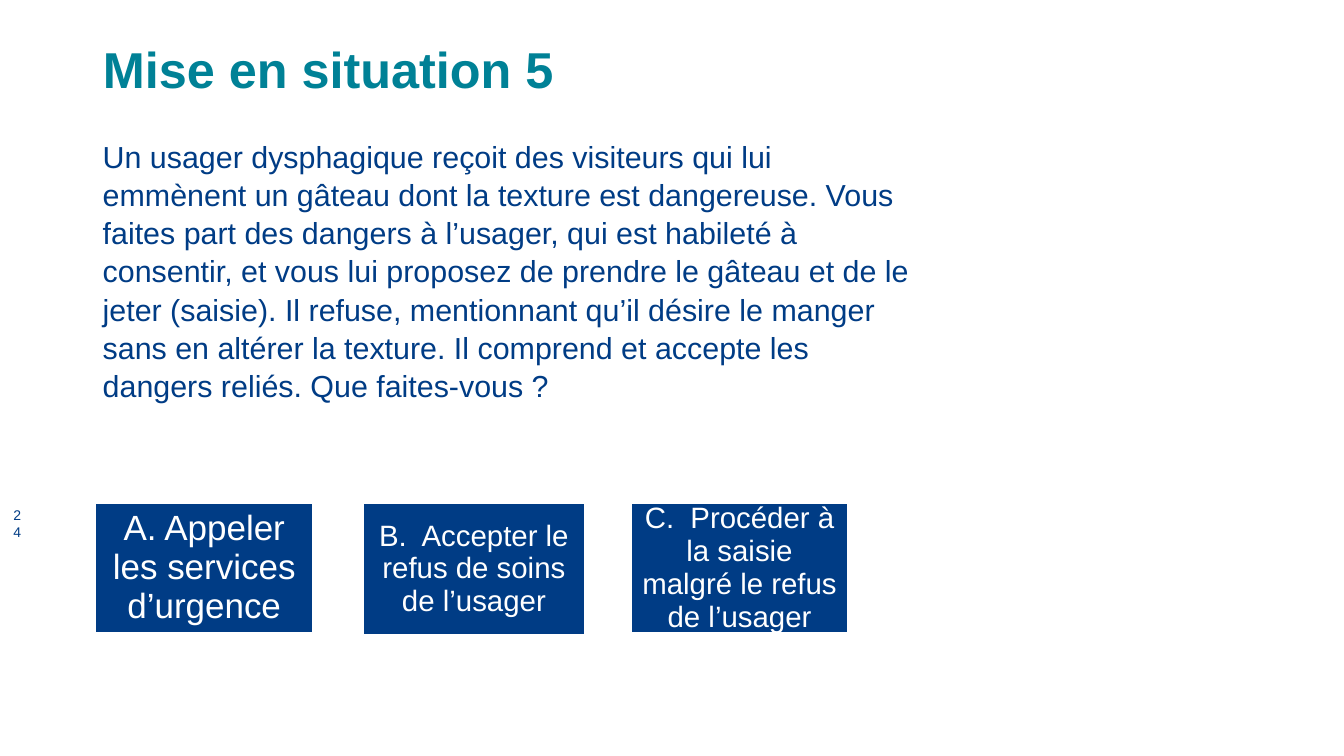
from pptx import Presentation
from pptx.dml.color import RGBColor
from pptx.enum.shapes import MSO_SHAPE
from pptx.enum.text import MSO_ANCHOR, MSO_AUTO_SIZE, PP_ALIGN
from pptx.util import Inches, Pt

TEAL = RGBColor(0x00, 0x81, 0x96)
NAVY = RGBColor(0x00, 0x3C, 0x85)
WHITE = RGBColor(0xFF, 0xFF, 0xFF)
FONT = "Arial"
TITLE_ONLY = 5

# Grid in inches
TEXT_LEFT, TEXT_WIDTH = 0.92, 8.31
CARD_LEFT, CARD_PITCH, CARD_ROW = 0.95, 2.655, 4.99

SITUATION = (
    "Un usager dysphagique reçoit des visiteurs qui lui emmènent un gâteau "
    "dont la texture est dangereuse. Vous faites part des dangers à l’usager, "
    "qui est habileté à consentir, et vous lui proposez de prendre le gâteau "
    "et de le jeter (saisie). Il refuse, mentionnant qu’il désire le manger "
    "sans en altérer la texture. Il comprend et accepte les dangers reliés. "
    "Que faites-vous ?"
)

# Text, font size, inset, width, height
CHOICES = [
    ("A. Appeler les services d’urgence", 25, 0.1, 2.15, 1.29),
    ("B.  Accepter le refus de soins de l’usager", 21, 0.09, 2.19, 1.31),
    ("C.  Procéder à la saisie malgré le refus de l’usager", 21, 0.09, 2.15, 1.29),
]


def write(shape, text, size, color, align=PP_ALIGN.LEFT, anchor=MSO_ANCHOR.TOP,
          spacing=1.0, bold=False):
    """Put one formatted paragraph in a shape."""
    frame = shape.text_frame
    frame.text = text
    frame.word_wrap = True
    frame.auto_size = MSO_AUTO_SIZE.NONE
    frame.vertical_anchor = anchor
    paragraph = frame.paragraphs[0]
    paragraph.alignment = align
    paragraph.line_spacing = spacing
    font = paragraph.runs[0].font
    font.name, font.size, font.bold = FONT, Pt(size), bold
    font.color.rgb = color


def add_title(slide, text):
    title = slide.shapes.title
    title.left, title.top = Inches(TEXT_LEFT), Inches(0.4)
    title.width, title.height = Inches(TEXT_WIDTH), Inches(1.45)
    write(title, text, 36, TEAL, spacing=0.9, bold=True)


def add_text(slide, text, left, top, width, height, size, **style):
    box = slide.shapes.add_textbox(
        Inches(left), Inches(top), Inches(width), Inches(height))
    write(box, text, size, NAVY, **style)


def add_choice(slide, column, text, size, inset, width, height):
    card = slide.shapes.add_shape(
        MSO_SHAPE.RECTANGLE, Inches(CARD_LEFT + column * CARD_PITCH),
        Inches(CARD_ROW), Inches(width), Inches(height))
    card.shadow.inherit = False
    card.fill.solid()
    card.fill.fore_color.rgb = NAVY
    card.line.color.rgb = WHITE
    card.line.width = Pt(1)
    frame = card.text_frame
    frame.margin_left = frame.margin_right = Inches(inset)
    frame.margin_top = frame.margin_bottom = Inches(inset)
    write(card, text, size, WHITE, PP_ALIGN.CENTER, MSO_ANCHOR.MIDDLE, 0.93)


def main():
    presentation = Presentation()
    presentation.slide_width = Inches(13.33)
    presentation.slide_height = Inches(7.5)
    slide = presentation.slides.add_slide(presentation.slide_layouts[TITLE_ONLY])

    # Title and situation
    add_title(slide, "Mise en situation 5")
    add_text(slide, SITUATION, TEXT_LEFT, 1.3, TEXT_WIDTH, 2.91, 21.7, spacing=1.05)

    # Page number
    add_text(slide, "24", 0, CARD_ROW, 0.34, 0.4, 10,
             align=PP_ALIGN.CENTER, anchor=MSO_ANCHOR.MIDDLE)

    # Answer choices
    for column, choice in enumerate(CHOICES):
        add_choice(slide, column, *choice)

    presentation.save("out.pptx")


if __name__ == "__main__":
    main()
